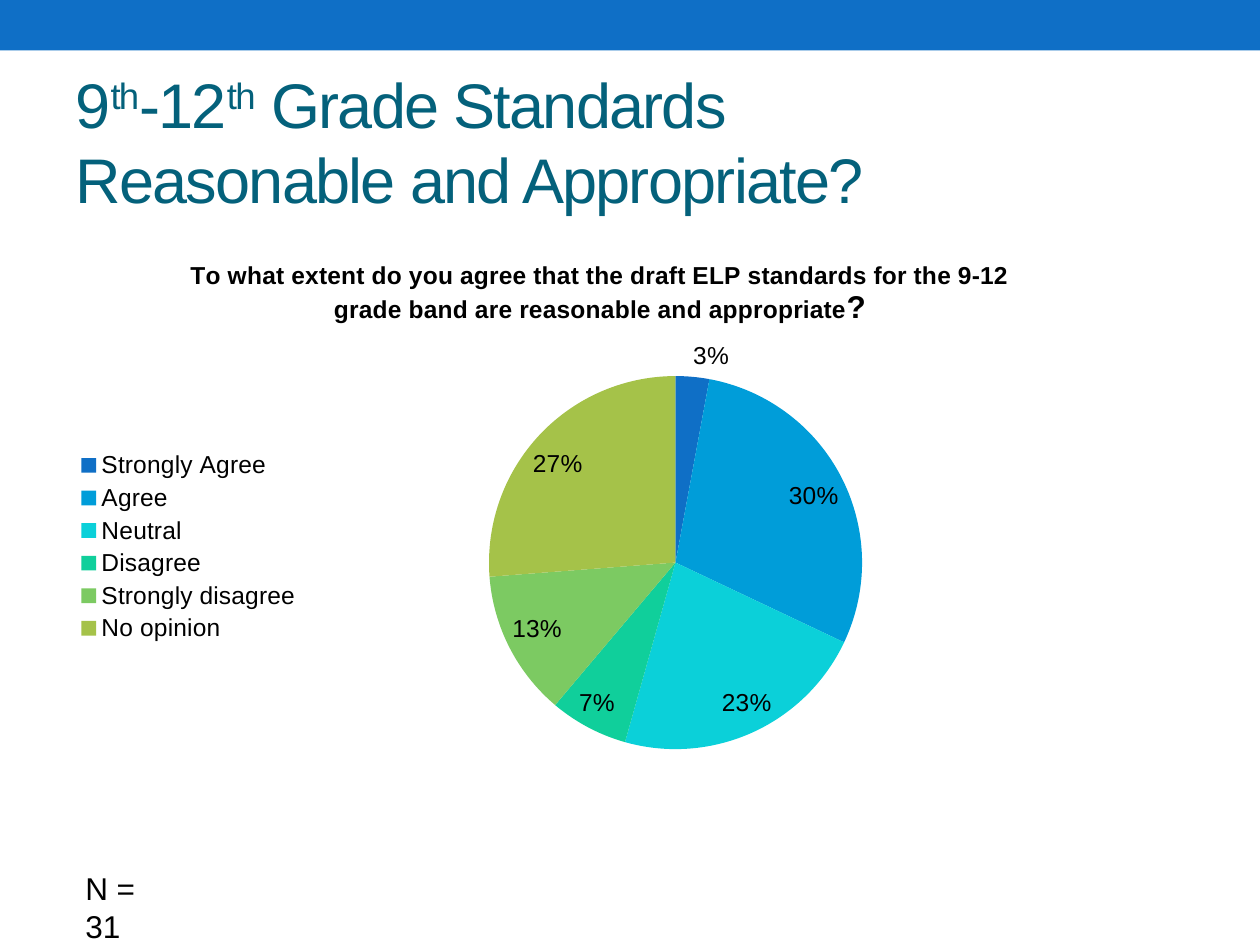
from lxml.etree import fromstring
from pptx import Presentation
from pptx.chart.data import CategoryChartData
from pptx.dml.color import RGBColor
from pptx.enum.chart import XL_CHART_TYPE, XL_LABEL_POSITION, XL_LEGEND_POSITION
from pptx.enum.shapes import MSO_SHAPE
from pptx.enum.text import MSO_ANCHOR, PP_ALIGN
from pptx.oxml.ns import nsdecls
from pptx.util import Cm, Pt

FONT = "Arial"
BLACK = RGBColor(0x00, 0x00, 0x00)
TEAL = RGBColor(0x04, 0x61, 0x7B)
BLUE = RGBColor(0x0F, 0x6F, 0xC6)
SLICES = [
    ("Strongly Agree", 0.03, BLUE),
    ("Agree", 0.30, RGBColor(0x00, 0x9D, 0xD9)),
    ("Neutral", 0.23, RGBColor(0x0B, 0xD0, 0xD9)),
    ("Disagree", 0.07, RGBColor(0x10, 0xCF, 0x9B)),
    ("Strongly disagree", 0.13, RGBColor(0x7C, 0xCA, 0x62)),
    ("No opinion", 0.27, RGBColor(0xA5, 0xC2, 0x49)),
]


def style(font, size, color=BLACK, bold=False):
    font.name, font.size, font.bold = FONT, Pt(size), bold
    font.color.rgb = color


def write(para, text, size=18, color=BLACK, bold=False, space=None, base=None):
    run = para.add_run()
    run.text = text
    style(run.font, size, color, bold)
    props = run.font._element
    if space is not None:
        props.set("spc", str(space * 100))
    if base is not None:
        props.set("baseline", str(base * 1000))


def layout(x, y, w=None, h=None):
    parts = '<c:xMode val="edge"/><c:yMode val="edge"/>'
    if w is not None:
        parts = '<c:layoutTarget val="inner"/>' + parts
    for tag, val in zip("xywh", (x, y, w, h)):
        if val is not None:
            parts += f'<c:{tag} val="{val}"/>'
    return fromstring(
        f'<c:layout {nsdecls("c")}><c:manualLayout>{parts}</c:manualLayout></c:layout>'
    )


def set_layout(node, new, spot):
    for old in node.findall(new.tag):
        node.remove(old)
    node.insert(spot, new)


def add_band(slide, box):
    band = slide.shapes.add_shape(MSO_SHAPE.RECTANGLE, *box)
    band.shadow.inherit = False
    band.fill.solid()
    band.fill.fore_color.rgb = BLUE
    band.line.fill.background()


def add_title(slide, box):
    title = slide.shapes.title
    title.left, title.top, title.width, title.height = box
    frame = title.text_frame
    frame.word_wrap = True
    frame.vertical_anchor = MSO_ANCHOR.MIDDLE
    para = frame.paragraphs[0]
    para.alignment = PP_ALIGN.LEFT
    look = dict(size=36, color=TEAL, space=-1)
    for text, base in (("9", 0), ("th", 30), ("-12", 0), ("th", 30),
                       (" Grade Standards", 0)):
        write(para, text, base=base, **look)
    para.add_line_break()
    write(para, "Reasonable and Appropriate?", base=0, **look)


def add_pie(slide, box):
    data = CategoryChartData(number_format="0%")
    data.categories = [name for name, _, _ in SLICES]
    data.add_series("Series 1", [share for _, share, _ in SLICES])
    chart = slide.shapes.add_chart(XL_CHART_TYPE.PIE, *box, data).chart
    style(chart.font, 10)

    chart.has_title = True
    head = chart.chart_title
    para = head.text_frame.paragraphs[0]
    write(para, "To what extent do you agree that the draft ELP standards for the "
          "9-12 grade band are reasonable and appropriate", size=14, bold=True)
    write(para, "?", bold=True)
    set_layout(head._element, layout(0.11, 0.04), 1)

    chart.has_legend = True
    chart.legend.position = XL_LEGEND_POSITION.LEFT
    chart.legend.include_in_layout = False
    style(chart.legend.font, 14)

    plot = chart.plots[0]
    plot.vary_by_categories = True
    set_layout(plot._element.getparent(), layout(0.11, 0.23, 0.87, 0.59), 0)
    series = plot.series[0]
    for i, (_, _, color) in enumerate(SLICES):
        fill = series.points[i].format.fill
        fill.solid()
        fill.fore_color.rgb = color

    labels = series.data_labels
    labels.show_value = True
    labels.number_format, labels.number_format_is_linked = "0%", False
    labels.position = XL_LABEL_POSITION.BEST_FIT
    style(labels.font, 14)


def add_note(slide, box):
    frame = slide.shapes.add_textbox(*box).text_frame
    frame.word_wrap = True
    write(frame.paragraphs[0], "N = 31")


def main():
    deck = Presentation()
    deck.slide_width, deck.slide_height = Cm(25.4), Cm(19.05)
    slide = deck.slides.add_slide(deck.slide_layouts[5])
    add_band(slide, (0, 0, deck.slide_width, Cm(1.02)))
    add_title(slide, (Cm(1.27), Cm(1.47), Cm(22.86), Cm(2.74)))
    add_pie(slide, (Cm(1.27), Cm(4.65), Cm(22.66), Cm(12.75)))
    add_note(slide, (Cm(1.47), Cm(17.4), Cm(2.18), Cm(1.02)))
    deck.save("out.pptx")


if __name__ == "__main__":
    main()
